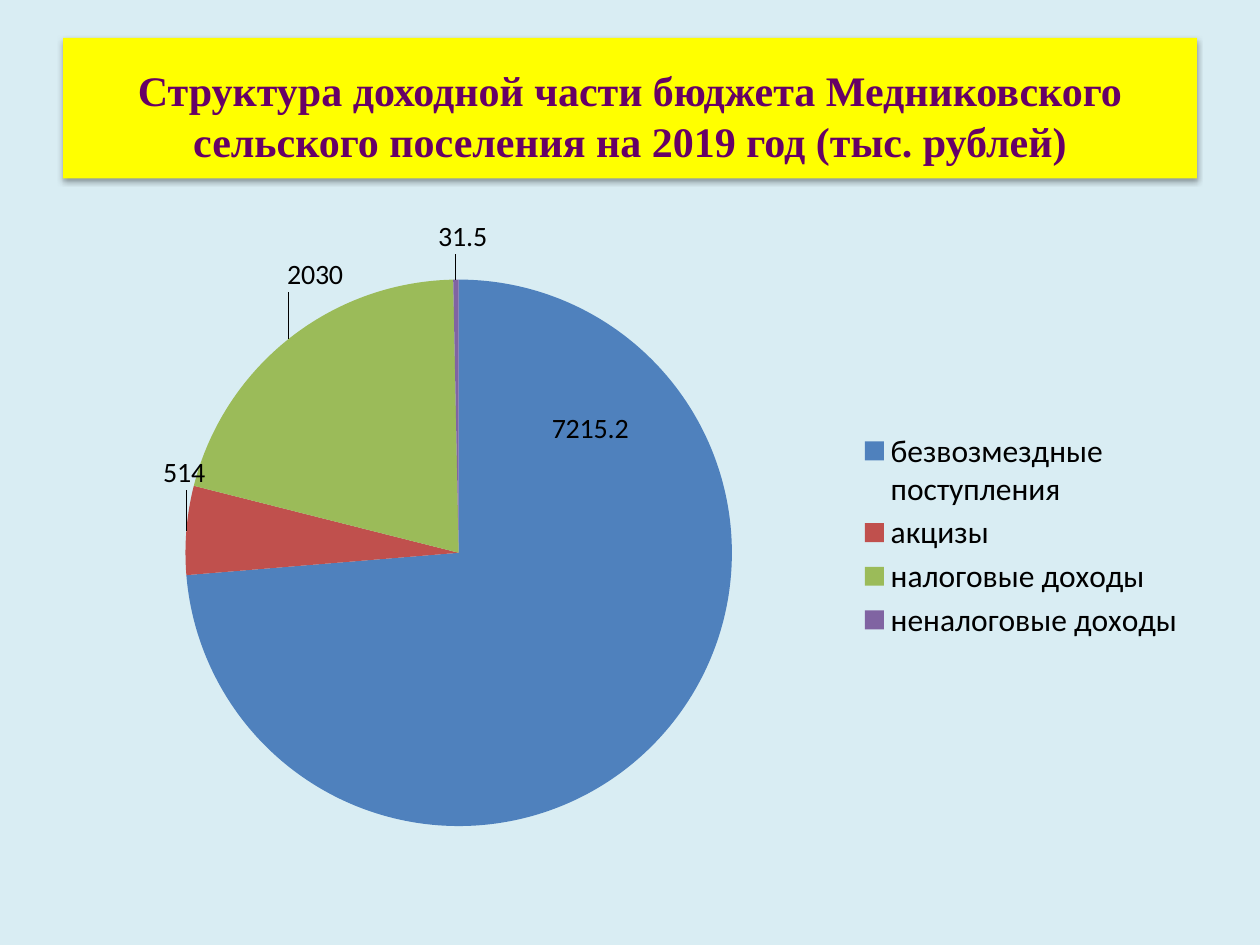
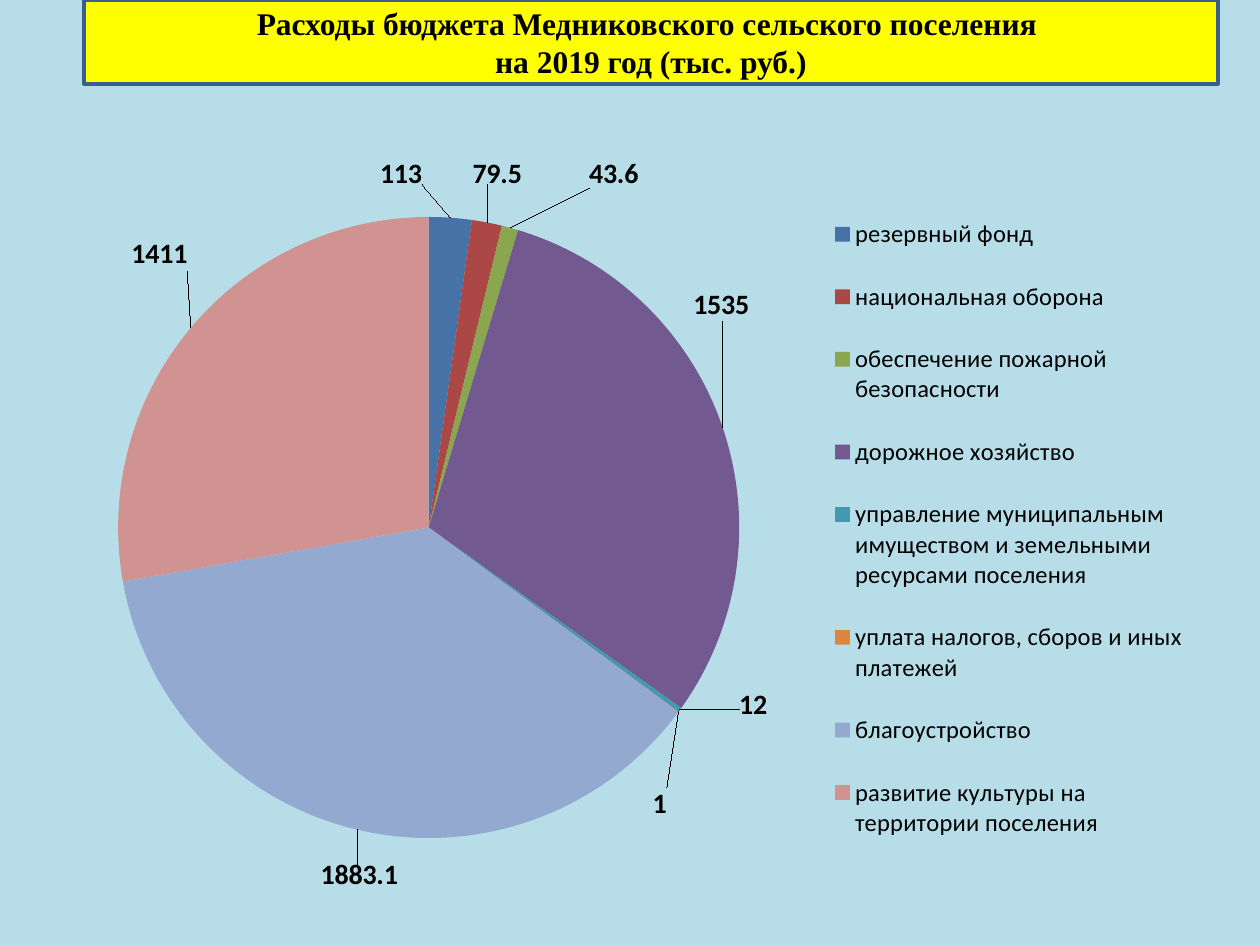
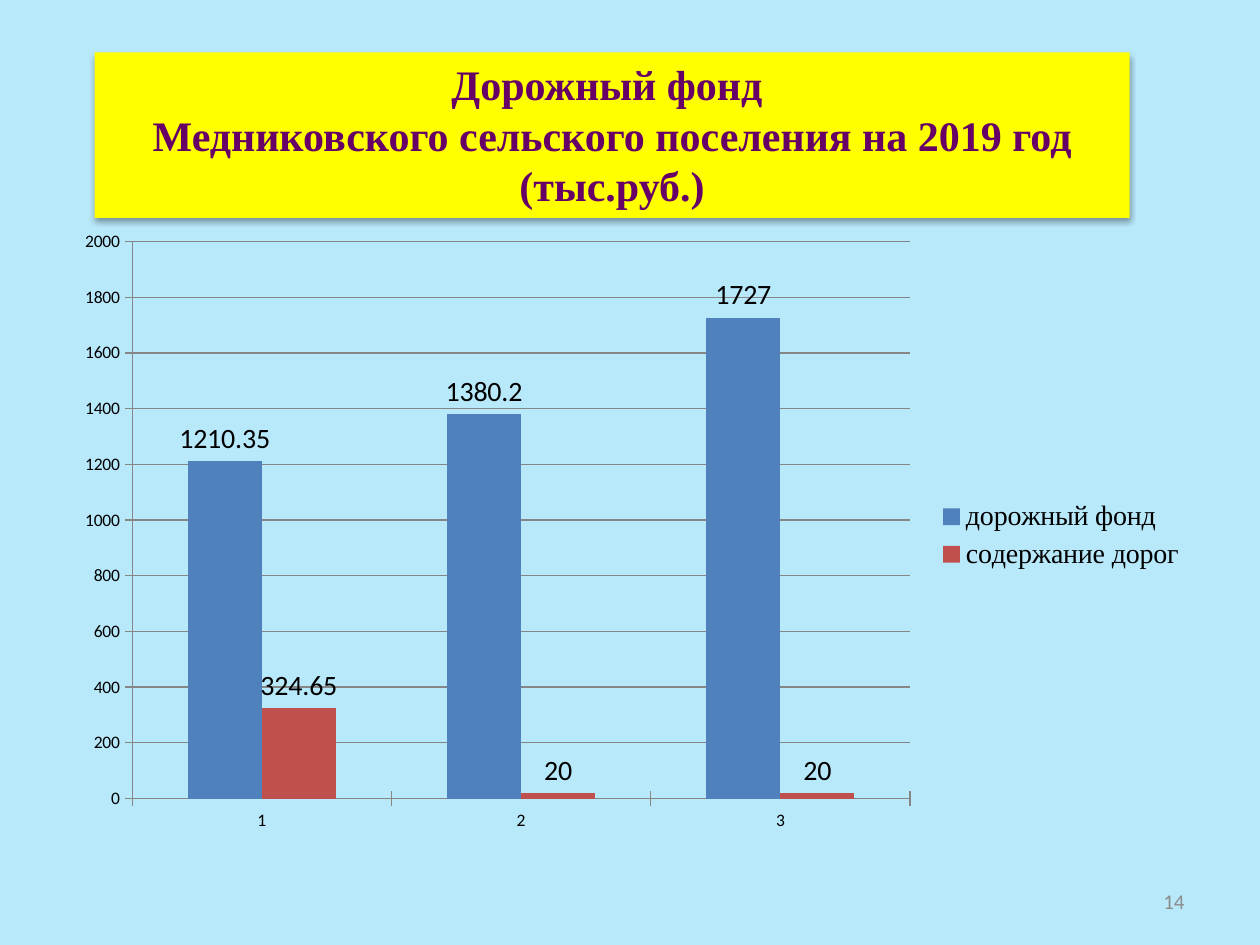
from dataclasses import dataclass
from typing import Optional

from lxml import etree
from pptx import Presentation
from pptx.chart.chart import Chart
from pptx.chart.data import CategoryChartData
from pptx.dml.color import RGBColor
from pptx.enum.chart import XL_CHART_TYPE, XL_LABEL_POSITION, XL_LEGEND_POSITION, XL_TICK_MARK
from pptx.enum.text import MSO_ANCHOR, MSO_AUTO_SIZE, PP_ALIGN
from pptx.oxml.ns import qn
from pptx.slide import Slide
from pptx.util import Inches, Pt

PIE = XL_CHART_TYPE.PIE
COLUMNS = XL_CHART_TYPE.COLUMN_CLUSTERED
OUTSIDE = XL_LABEL_POSITION.OUTSIDE_END
LEGEND_RIGHT = XL_LEGEND_POSITION.RIGHT
CROSS = XL_TICK_MARK.CROSS
TOP, MIDDLE = MSO_ANCHOR.TOP, MSO_ANCHOR.MIDDLE
CENTER, RIGHT = PP_ALIGN.CENTER, PP_ALIGN.RIGHT
FIXED = MSO_AUTO_SIZE.NONE

SLIDE_WIDTH, SLIDE_HEIGHT = Inches(10), Inches(7.5)
GRID_COLUMNS, GRID_ROWS = 120, 90


@dataclass(frozen=True)
class Theme:
    """Colours, fonts and type sizes of the deck."""

    band: str = "FFFF00"
    band_line: str = "3A5F8C"
    plum: str = "660066"
    black: str = "000000"
    axis: str = "868686"
    page_number: str = "8C8C8C"
    accents: tuple[str, ...] = ("4F81BD", "C0504D", "9BBB59", "8064A2")
    muted: tuple[str, ...] = ("4672A8", "AB4744", "8AA64F", "725990",
                              "4299B0", "DC853E", "93A9CF", "D19392")
    heading_font: str = "Times New Roman"
    body_font: str = "Calibri"
    heading_size: int = 24
    small_heading_size: int = 18
    label_size: int = 16
    page_size: int = 12
    axis_size: int = 10


THEME = Theme()


@dataclass(frozen=True)
class Box:
    """A rectangle in slide grid cells, or in percent of a chart."""

    left: float
    top: float
    width: float
    height: float

    def emu(self) -> tuple[int, int, int, int]:
        """Convert grid cells to slide lengths."""
        column, row = SLIDE_WIDTH / GRID_COLUMNS, SLIDE_HEIGHT / GRID_ROWS
        return (round(self.left * column), round(self.top * row),
                round(self.width * column), round(self.height * row))


@dataclass(frozen=True)
class Band:
    """The heading band of a slide."""

    box: Box
    lines: tuple[str, ...]
    color: str = THEME.plum
    size: int = THEME.heading_size
    anchor: MSO_ANCHOR = MIDDLE
    top_inset: float = 0.05
    rounded: bool = False


@dataclass(frozen=True)
class Series:
    """A named row of chart values."""

    name: str
    values: tuple[float, ...]


@dataclass(frozen=True)
class Graph:
    """A chart with its plot and legend areas in percent."""

    box: Box
    plot: Box
    legend: Box
    legend_size: int
    categories: tuple[str, ...]
    series: tuple[Series, ...]
    colors: tuple[str, ...] = THEME.accents
    legend_font: str = THEME.body_font
    label_shifts: tuple[tuple[float, float], ...] = ()
    bold_labels: bool = False


@dataclass(frozen=True)
class Page:
    """One slide of the deck."""

    background: str
    band: Band
    graph: Graph
    number: Optional[str] = None


CHART_BOX = Box(6, 21, 108, 59.4)

PAGES = (
    Page(
        "D9EDF3",
        Band(Box(6, 3.6, 108, 13.4),
             ("Структура доходной части бюджета Медниковского сельского поселения "
              "на 2019 год (тыс. рублей)",), top_inset=0.16),
        Graph(CHART_BOX, Box(10.8, 9.4, 48.2, 87.8), Box(70, 33, 29, 35), 18,
              ("безвозмездные поступления", "акцизы", "налоговые доходы",
               "неналоговые доходы"),
              (Series("Доходы", (7215.2, 514, 2030, 31.5)),),
              label_shifts=((-10, -53), (2.3, -9), (5.2, -6.6), (0.6, -2.9))),
    ),
    Page(
        "B7DEE8",
        Band(Box(8, 0, 108, 8),
             ("Расходы бюджета Медниковского сельского поселения ",
              "на 2019 год (тыс. руб.)"),
             color=THEME.black, size=THEME.small_heading_size, rounded=True),
        Graph(Box(6, 15, 108, 70), Box(4.8, 8.1, 54.9, 84.5), Box(67.4, 4, 32, 93), 14,
              ("резервный фонд", "национальная оборона",
               "обеспечение пожарной безопасности", "дорожное хозяйство",
               "управление муниципальным имуществом и земельными ресурсами поселения",
               "уплата налогов, сборов и иных платежей", "благоустройство",
               "развитие культуры на территории поселения"),
              (Series("Расходы", (113, 79.5, 43.6, 1535, 12, 1, 1883.1, 1411)),),
              colors=THEME.muted, bold_labels=True,
              label_shifts=((-4.4, -3.5), (-1.4, -4.2), (6.8, -4.4), (-3.2, -14),
                            (4.7, -3.5), (-2.8, 9.7), (3.7, 4.2), (0.2, -7))),
    ),
    Page(
        "B8E9FB",
        Band(Box(9, 5, 98.6, 15.75),
             ("Дорожный фонд ", "Медниковского сельского поселения на 2019 год (тыс.руб.)"),
             anchor=TOP),
        Graph(CHART_BOX, Box(6.1, 3.4, 68.6, 89.3), Box(77, 44, 22, 13), 16,
              ("1", "2", "3"),
              (Series("дорожный фонд", (1210.35, 1380.2, 1727)),
               Series("содержание дорог", (324.65, 20, 20))),
              legend_font=THEME.heading_font),
        number="14",
    ),
)


def rgb(value: str) -> RGBColor:
    """Turn a hex value into a colour."""
    return RGBColor.from_string(value)


def style_font(font, size: int, color: str = THEME.black,
               name: str = THEME.body_font, bold: bool = False) -> None:
    """Set the look of a run or chart text."""
    font.size, font.name, font.bold = Pt(size), name, bold
    font.color.rgb = rgb(color)


def add_shadow(properties) -> None:
    """Give a shape a soft shadow below it."""
    effects = etree.SubElement(properties, qn("a:effectLst"))
    shadow = etree.SubElement(effects, qn("a:outerShdw"), blurRad=str(Pt(3.1)),
                              dist=str(Pt(1.8)), dir="5400000", rotWithShape="0")
    tint = etree.SubElement(shadow, qn("a:srgbClr"), val=THEME.black)
    etree.SubElement(tint, qn("a:alpha"), val="35000")


def draw_band(slide: Slide, band: Band) -> None:
    """Move, fill and write the title placeholder."""
    title = slide.shapes.title
    title.left, title.top, title.width, title.height = band.box.emu()
    properties = title.element.spPr
    outline = etree.SubElement(properties, qn("a:prstGeom"),
                               prst="roundRect" if band.rounded else "rect")
    etree.SubElement(outline, qn("a:avLst"))
    title.fill.solid()
    title.fill.fore_color.rgb = rgb(THEME.band)
    if band.rounded:
        title.line.color.rgb = rgb(THEME.band_line)
        title.line.width = Pt(2)
    else:
        title.line.fill.background()
        add_shadow(properties)
    frame = title.text_frame
    frame.auto_size, frame.word_wrap = FIXED, True
    frame.vertical_anchor = band.anchor
    frame.margin_top = Inches(band.top_inset)
    for index, line in enumerate(band.lines):
        paragraph = frame.add_paragraph() if index else frame.paragraphs[0]
        paragraph.alignment = CENTER
        run = paragraph.add_run()
        run.text = line
        style_font(run.font, band.size, band.color, THEME.heading_font, True)


def set_layout(parent, position: int, settings: dict[str, object]) -> None:
    """Place a chart part by a manual layout."""
    for old in parent.findall(qn("c:layout")):
        parent.remove(old)
    layout = etree.Element(qn("c:layout"))
    manual = etree.SubElement(layout, qn("c:manualLayout"))
    for key, value in settings.items():
        etree.SubElement(manual, qn(f"c:{key}"), val=str(value))
    parent.insert(position, layout)


def area(box: Box) -> dict[str, object]:
    """List the layout settings of a box in percent."""
    return {"xMode": "edge", "yMode": "edge", "x": box.left / 100, "y": box.top / 100,
            "w": box.width / 100, "h": box.height / 100}


def style_pie(chart: Chart, graph: Graph) -> None:
    """Colour the slices and shift their labels."""
    chart.plots[0].vary_by_categories = True
    slices = chart.plots[0].series[0]
    for index, color in enumerate(graph.colors):
        point = slices.points[index]
        point.format.fill.solid()
        point.format.fill.fore_color.rgb = rgb(color)
        style_font(point.data_label.font, THEME.label_size, bold=graph.bold_labels)
        point.data_label.position = OUTSIDE
    labels = chart.element.xpath(".//c:dLbl")
    for label, (across, down) in zip(labels, graph.label_shifts):
        set_layout(label, 1, {"x": across / 100, "y": down / 100})


def style_columns(chart: Chart, graph: Graph) -> None:
    """Colour the columns and draw the axes."""
    plot = chart.plots[0]
    plot.vary_by_categories = False
    plot.gap_width, plot.overlap = 150, 0
    for series, color in zip(plot.series, graph.colors):
        series.invert_if_negative = False
        series.format.fill.solid()
        series.format.fill.fore_color.rgb = rgb(color)
    chart.value_axis.has_major_gridlines = True
    lines = [chart.value_axis.major_gridlines.format.line]
    for axis in (chart.category_axis, chart.value_axis):
        axis.major_tick_mark = CROSS
        style_font(axis.tick_labels.font, THEME.axis_size)
        lines.append(axis.format.line)
    for line in lines:
        line.color.rgb = rgb(THEME.axis)
        line.width = Pt(0.75)


def draw_graph(slide: Slide, graph: Graph) -> None:
    """Add a chart with its labels and legend."""
    data = CategoryChartData()
    data.categories = graph.categories
    for series in graph.series:
        data.add_series(series.name, series.values)
    is_pie = len(graph.series) == 1
    chart = slide.shapes.add_chart(PIE if is_pie else COLUMNS, *graph.box.emu(), data).chart
    chart.has_title = False
    style_font(chart.font, THEME.axis_size)
    chart.has_legend = True
    chart.legend.position = LEGEND_RIGHT
    chart.legend.include_in_layout = False
    style_font(chart.legend.font, graph.legend_size, name=graph.legend_font)
    for series in chart.plots[0].series:
        series.data_labels.show_value = True
        series.data_labels.position = OUTSIDE
        style_font(series.data_labels.font, THEME.label_size, bold=graph.bold_labels)
    if is_pie:
        style_pie(chart, graph)
    else:
        style_columns(chart, graph)
    set_layout(chart.element.xpath(".//c:plotArea")[0], 0,
               {"layoutTarget": "inner", **area(graph.plot)})
    set_layout(chart.element.xpath(".//c:legend")[0], 1, area(graph.legend))


def draw_number(slide: Slide, number: str) -> None:
    """Write the page number in the lower right corner."""
    frame = slide.shapes.add_textbox(*Box(86, 83.4, 28, 4.8).emu()).text_frame
    frame.word_wrap, frame.vertical_anchor = True, MIDDLE
    paragraph = frame.paragraphs[0]
    paragraph.alignment = RIGHT
    run = paragraph.add_run()
    run.text = number
    style_font(run.font, THEME.page_size, THEME.page_number)


def main() -> None:
    """Build and save the deck."""
    deck = Presentation()
    deck.slide_width, deck.slide_height = SLIDE_WIDTH, SLIDE_HEIGHT
    title_only = deck.slide_layouts.get_by_name("Title Only")
    for page in PAGES:
        slide = deck.slides.add_slide(title_only)
        slide.background.fill.solid()
        slide.background.fill.fore_color.rgb = rgb(page.background)
        draw_band(slide, page.band)
        draw_graph(slide, page.graph)
        if page.number:
            draw_number(slide, page.number)
    deck.save("out.pptx")


if __name__ == "__main__":
    main()
